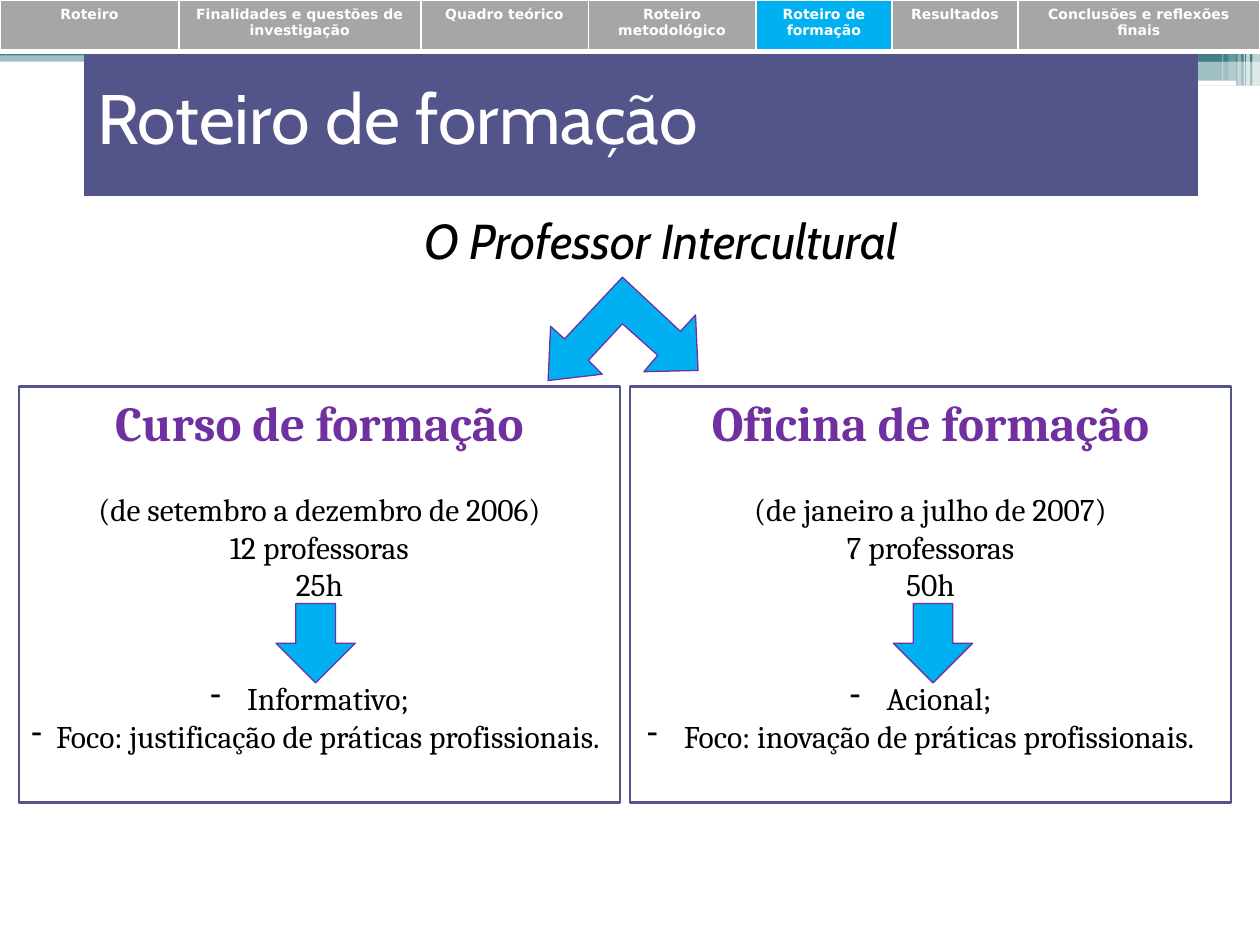
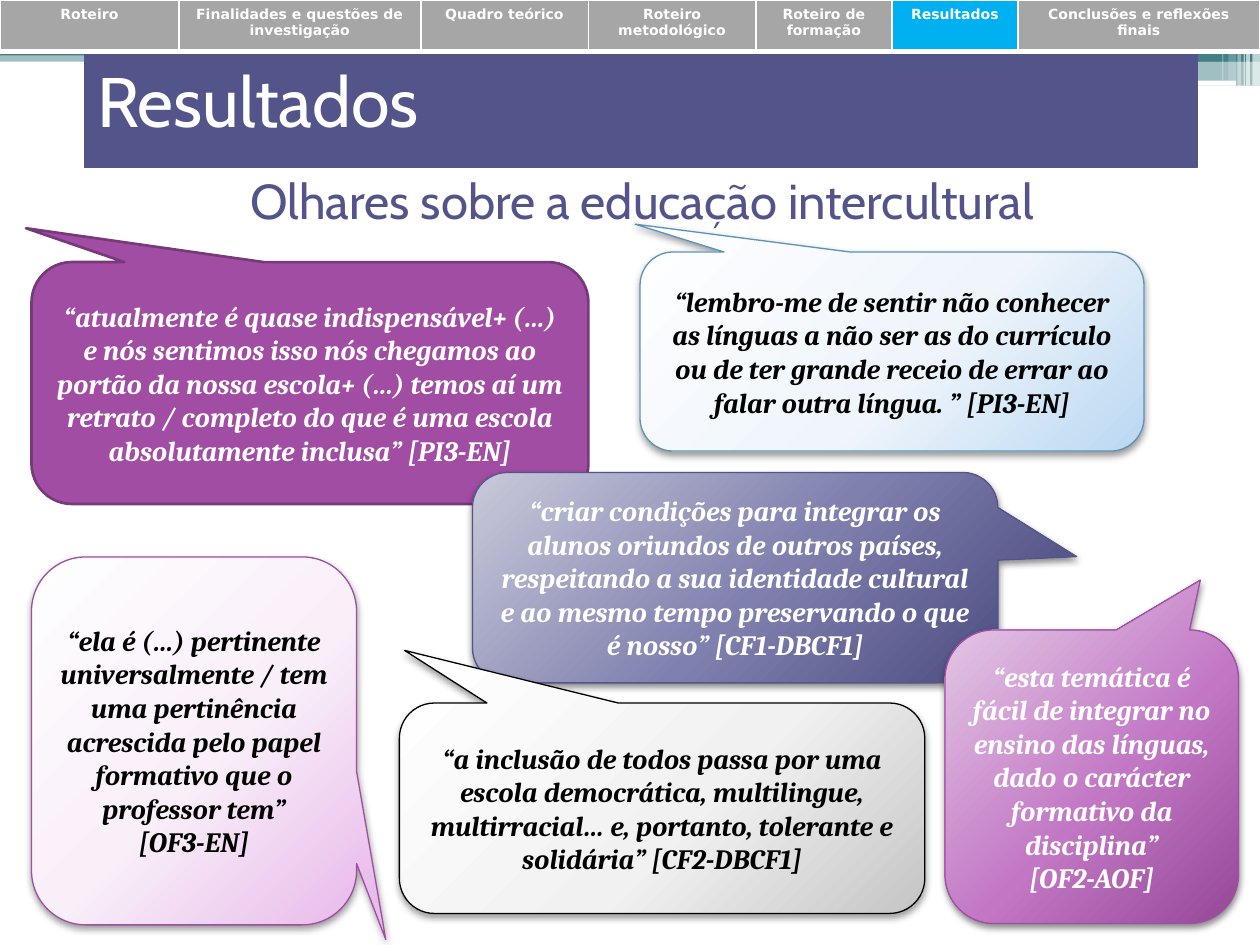
from dataclasses import dataclass
from typing import NamedTuple, Optional

from lxml import etree
from pptx import Presentation
from pptx.dml.color import RGBColor
from pptx.enum.shapes import MSO_SHAPE
from pptx.enum.text import MSO_ANCHOR, MSO_AUTO_SIZE, PP_ALIGN
from pptx.oxml.ns import qn
from pptx.util import Pt

RECT = MSO_SHAPE.RECTANGLE
ROUNDED = MSO_SHAPE.ROUNDED_RECTANGLE
DOWN_ARROW = MSO_SHAPE.DOWN_ARROW
CALLOUT = MSO_SHAPE.ROUNDED_RECTANGULAR_CALLOUT
LEFT, CENTER = PP_ALIGN.LEFT, PP_ALIGN.CENTER
TOP, MIDDLE, BOTTOM = MSO_ANCHOR.TOP, MSO_ANCHOR.MIDDLE, MSO_ANCHOR.BOTTOM
NO_AUTOFIT = MSO_AUTO_SIZE.NONE

EMU_PER_PX = 9144  # 100 px to the inch
HEADING_FONT, BODY_FONT, NAV_FONT = "Cabin", "Cambria", "DejaVu Sans"
BODY_LINE = 21.7  # points taken by one 18 pt line

COLORS = {
    "white": "FFFFFF",
    "black": "000000",
    "indigo": "53548A",
    "slate": "424456",
    "teal": "438086",
    "sky": "00B0F0",
    "purple": "7030A0",
    "grey": "A6A6A6",
    "orchid": "A04DA3",
    "plum": "763979",
    "blue": "5C92B5",
}

GRADIENTS = {
    "indigo": ("C9C9DA", "7F80AE", "4D4E81"),
    "grey": ("FEFEFE", "F1F1F1", "C5C5C5"),
    "pale orchid": ("FEFEFF", "F9EFF9", "E8BBEA"),
    "orchid": ("E2C6E3", "C277C5", "954898"),
    "pale blue": ("FEFEFF", "EFF5FB", "BAD8F2"),
}
GRADIENT_STOPS = (0, 55, 100)
GRADIENT_FOCUS = {"l": -40, "t": -90, "r": 140, "b": 190}

NAV_TABS = (
    ("Roteiro", 142),
    ("Finalidades e questões de investigação", 192),
    ("Quadro teórico", 133),
    ("Roteiro metodológico", 133),
    ("Roteiro de formação", 108),
    ("Resultados", 100),
    ("Conclusões e reflexões finais", 192),
)
NAV_HEIGHT = 41
NAV_BORDERS = {"a:lnL": 1, "a:lnR": 1, "a:lnT": 1, "a:lnB": 3}


class Box(NamedTuple):
    left: int
    top: int
    width: int
    height: int


class Band(NamedTuple):
    box: Box
    color: str
    alpha: int = 100
    shape: int = RECT


class TextStyle(NamedTuple):
    font: str
    size: int
    color: str
    bold: bool = False
    italic: bool = False


@dataclass
class Card:
    left: int
    arrow_left: int
    heading: str
    facts: tuple[str, ...]
    points: tuple[str, ...]


@dataclass
class Quote:
    box: Box
    tail: tuple[float, float]
    line: str
    text: str
    color: str
    gradient: Optional[str] = None
    shadow_alpha: int = 40
    shadow_blur: float = 4.1


BANDS = (
    Band(Box(0, 40, 1000, 9), "teal", 50),
    Band(Box(0, 0, 1000, 34), "slate"),
    Band(Box(0, 34, 1000, 10), "teal"),
    Band(Box(592, 39, 408, 10), "teal"),
    Band(Box(592, 48, 408, 20), "teal", 50),
    Band(Box(806, 64, 175, 4), "white", shape=ROUNDED),
    Band(Box(994, 0, 6, 68), "white", 65),
    Band(Box(989, 0, 3, 68), "white", 65),
    Band(Box(987, 0, 1, 68), "white", 60),
    Band(Box(982, 0, 3, 68), "white", 40),
    Band(Box(975, 0, 6, 64), "white", 20),
    Band(Box(970, 0, 1, 64), "white", 30),
)

FORK_ARROW = ((435, 302), (478, 297), (467, 286), (494, 257), (522, 282), (511, 295),
              (554, 294), (552, 250), (540, 263), (494, 220), (448, 269), (437, 259))

CARDS = (
    Card(15, 219, "Curso de formação",
         ("(de setembro a dezembro de 2006)", "12 professoras", "25h"),
         (" Informativo;", " Foco: justificação de práticas profissionais.")),
    Card(500, 709, "Oficina de formação",
         ("(de janeiro a julho de 2007)", "7 professoras", "50h"),
         (" Acional;", " Foco: inovação de práticas profissionais.")),
)

QUOTES = (
    Quote(Box(25, 208, 442, 192), (-0.51, -0.64), "plum",
          "“atualmente é quase indispensável+ (…) e nós sentimos isso nós chegamos ao "
          "portão da nossa escola+ (…) temos aí um retrato / completo do que é uma "
          "escola absolutamente inclusa” [PI3-EN]", "white"),
    Quote(Box(375, 375, 417, 167), (0.65, -0.1), "indigo",
          "“criar condições para integrar os alunos oriundos de outros países, "
          "respeitando a sua identidade cultural e ao mesmo tempo preservando o que é "
          "nosso” [CF1-DBCF1]", "white", "indigo", 45, 4),
    Quote(Box(317, 558, 417, 167), (-0.49, -0.75), "black",
          "“a inclusão de todos passa por uma escola democrática, multilingue, "
          "multirracial… e, portanto, tolerante e solidária” [CF2-DBCF1]",
          "black", "grey"),
    Quote(Box(25, 442, 258, 292), (0.59, 0.54), "orchid",
          "“ela é (…) pertinente universalmente / tem uma pertinência acrescida pelo "
          "papel formativo que o professor tem”\n[OF3-EN]", "black", "pale orchid"),
    Quote(Box(750, 500, 233, 233), (0.37, -0.67), "orchid",
          "“esta temática é fácil de integrar no ensino das línguas, dado o carácter "
          "formativo da disciplina”\n[OF2-AOF]", "white", "orchid", 45, 4),
    Quote(Box(508, 200, 400, 158), (-0.51, -0.64), "blue",
          "“lembro-me de sentir não conhecer as línguas a não ser as do currículo ou de "
          "ter grande receio de errar ao falar outra língua. ” [PI3-EN]",
          "black", "pale blue"),
)


def px(n: int) -> int:
    return n * EMU_PER_PX


def rgb(name: str) -> RGBColor:
    return RGBColor.from_string(COLORS[name])


def add_xml(parent, tag: str, **attrs):
    return etree.SubElement(parent, qn(tag), {k: str(v) for k, v in attrs.items()})


def style_paragraph(p, style: TextStyle, align=CENTER) -> None:
    p.alignment = align
    for r in p.runs:
        r.font.name, r.font.size = style.font, Pt(style.size)
        r.font.bold, r.font.italic = style.bold, style.italic
        r.font.color.rgb = rgb(style.color)


def paint(sp, fill: str, line: Optional[str] = None, width: float = 0.75) -> None:
    """Give a shape a plain fill and outline, without a shadow."""
    sp.shadow.inherit = False
    sp.fill.solid()
    sp.fill.fore_color.rgb = rgb(fill)
    if line:
        sp.line.color.rgb = rgb(line)
        sp.line.width = Pt(width)
    else:
        sp.line.fill.background()


def add_shape(slide, shape, box: Box, fill: str, line=None, width: float = 0.75):
    sp = slide.shapes.add_shape(shape, *map(px, box))
    paint(sp, fill, line, width)
    return sp


def add_band(slide, band: Band) -> None:
    sp = add_shape(slide, band.shape, band.box, band.color)
    if band.alpha < 100:
        color = sp.element.spPr.find(qn("a:solidFill"))[0]
        add_xml(color, "a:alpha", val=band.alpha * 1000)


def fill_placeholder(slide, sp, box: Box, text: str, style: TextStyle, anchor, align):
    """Place a placeholder in front of what is already drawn and write its text."""
    slide.shapes.element.append(sp.element)
    sp.left, sp.top, sp.width, sp.height = map(px, box)
    tf = sp.text_frame
    tf.text = text
    tf.auto_size, tf.word_wrap, tf.vertical_anchor = NO_AUTOFIT, True, anchor
    style_paragraph(tf.paragraphs[0], style, align)


def add_title(slide, text: str, box: Box) -> None:
    title = slide.shapes.title
    fill_placeholder(slide, title, box, text, TextStyle(HEADING_FONT, 40, "white"), MIDDLE, LEFT)
    paint(title, "indigo", "indigo")


def add_subtitle(slide, text: str, box: Box, color: str, italic: bool = False) -> None:
    body = slide.placeholders[1]
    style = TextStyle(HEADING_FONT, 28, color, italic=italic)
    fill_placeholder(slide, body, box, text, style, BOTTOM, CENTER)
    body.text_frame.margin_bottom = px(10)
    p = body.text_frame.paragraphs[0]
    p.space_before = Pt(0)
    pPr = p._p.get_or_add_pPr()
    pPr.set("marL", str(px(53)))
    pPr.set("indent", "0")
    add_xml(pPr, "a:buNone")


def add_nav(slide, current: str) -> None:
    """Draw the row of section tabs with the current one highlighted."""
    total = sum(width for _, width in NAV_TABS)
    frame = slide.shapes.add_table(1, len(NAV_TABS), 0, 0, px(total), px(NAV_HEIGHT))
    table = frame.table
    table.rows[0].height = px(NAV_HEIGHT)
    for i, (label, width) in enumerate(NAV_TABS):
        table.columns[i].width = px(width)
        cell = table.cell(0, i)
        cell.text = label
        style_paragraph(cell.text_frame.paragraphs[0], TextStyle(NAV_FONT, 8, "white", True))
        tcPr = cell._tc.get_or_add_tcPr()
        for tag, points in NAV_BORDERS.items():
            ln = add_xml(tcPr, tag, w=Pt(points))
            add_xml(add_xml(ln, "a:solidFill"), "a:srgbClr", val=COLORS["white"])
        cell.fill.solid()
        cell.fill.fore_color.rgb = rgb("sky" if label == current else "grey")


def add_fork_arrow(slide) -> None:
    builder = slide.shapes.build_freeform(*FORK_ARROW[0], scale=EMU_PER_PX)
    builder.add_line_segments(FORK_ARROW[1:], close=True)
    paint(builder.convert_to_shape(), "sky", "purple")


def add_card(slide, card: Card) -> None:
    sp = add_shape(slide, RECT, Box(card.left, 307, 477, 330), "white", "indigo", 1.5)
    tf = sp.text_frame
    tf.word_wrap, tf.vertical_anchor = True, TOP
    tf.text = "\n".join((card.heading, *card.facts, *card.points))
    heading, *rest = tf.paragraphs
    style_paragraph(heading, TextStyle(BODY_FONT, 28, "purple", True))
    points = rest[len(card.facts):]
    for p in points:
        add_xml(p._p.get_or_add_pPr(), "a:buChar", char="-")
    for p in rest:
        style_paragraph(p, TextStyle(BODY_FONT, 18, "black"))
    rest[0].space_before = Pt(BODY_LINE)
    points[0].space_before = Pt(2 * BODY_LINE)


def add_gradient(sp, name: str) -> None:
    spPr = sp.element.spPr
    grad = etree.Element(qn("a:gradFill"), rotWithShape="1")
    stops = add_xml(grad, "a:gsLst")
    for pos, color in zip(GRADIENT_STOPS, GRADIENTS[name]):
        add_xml(add_xml(stops, "a:gs", pos=pos * 1000), "a:srgbClr", val=color)
    circle = add_xml(grad, "a:path", path="circle")
    add_xml(circle, "a:fillToRect", **{k: v * 1000 for k, v in GRADIENT_FOCUS.items()})
    spPr.replace(spPr.find(qn("a:solidFill")), grad)


def add_shadow(sp, alpha: int, blur: float) -> None:
    effects = sp.element.spPr.find(qn("a:effectLst"))
    shadow = add_xml(effects, "a:outerShdw", blurRad=Pt(blur), dist=Pt(2),
                     dir=90 * 60000, rotWithShape=0)
    color = add_xml(shadow, "a:srgbClr", val=COLORS["black"])
    add_xml(color, "a:alpha", val=alpha * 1000)


def add_quote(slide, quote: Quote) -> None:
    width = 0.75 if quote.gradient else 1.5
    sp = add_shape(slide, CALLOUT, quote.box, "orchid", quote.line, width)
    sp.adjustments[0], sp.adjustments[1] = quote.tail
    if quote.gradient:
        add_gradient(sp, quote.gradient)
        add_shadow(sp, quote.shadow_alpha, quote.shadow_blur)
    tf = sp.text_frame
    tf.word_wrap, tf.vertical_anchor = True, MIDDLE
    tf.text = quote.text
    for p in tf.paragraphs:
        style_paragraph(p, TextStyle(BODY_FONT, 16, quote.color, True, True))


def new_slide(prs, title: str, title_box: Box):
    slide = prs.slides.add_slide(prs.slide_layouts[1])
    for band in BANDS:
        add_band(slide, band)
    add_title(slide, title, title_box)
    return slide


def build_training_slide(prs) -> None:
    title = "Roteiro de formação"
    slide = new_slide(prs, title, Box(67, 30, 883, 125))
    add_subtitle(slide, "O Professor Intercultural", Box(48, 71, 900, 153), "black", True)
    add_fork_arrow(slide)
    for card in CARDS:
        add_card(slide, card)
        add_shape(slide, DOWN_ARROW, Box(card.arrow_left, 479, 63, 63), "sky", "purple")
    add_nav(slide, title)


def build_results_slide(prs) -> None:
    title = "Resultados"
    slide = new_slide(prs, title, Box(67, 25, 883, 108))
    add_subtitle(slide, "Olhares sobre a educação intercultural",
                 Box(-17, 39, 1000, 153), "indigo")
    for quote in QUOTES:
        add_quote(slide, quote)
    add_nav(slide, title)


def main() -> None:
    prs = Presentation()
    prs.slide_width, prs.slide_height = px(1000), px(750)
    build_training_slide(prs)
    build_results_slide(prs)
    prs.save("out.pptx")


if __name__ == "__main__":
    main()
